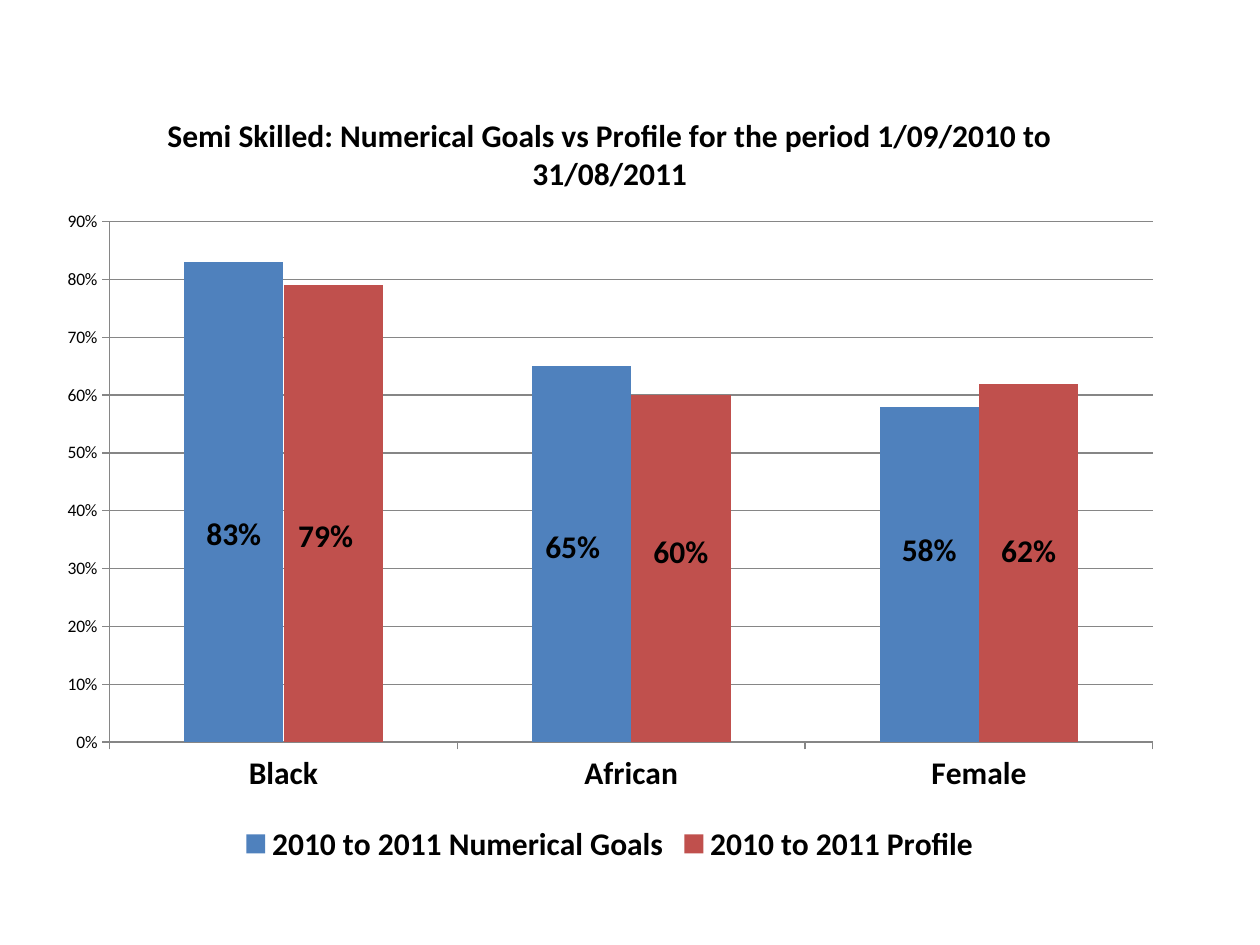
from lxml import etree
from pptx import Presentation
from pptx.chart.data import CategoryChartData
from pptx.dml.color import RGBColor
from pptx.enum.chart import XL_CHART_TYPE, XL_LABEL_POSITION, XL_LEGEND_POSITION, XL_TICK_MARK
from pptx.oxml.ns import qn
from pptx.util import Inches, Pt

COLUMN = XL_CHART_TYPE.COLUMN_CLUSTERED
CENTER = XL_LABEL_POSITION.CENTER
BOTTOM = XL_LEGEND_POSITION.BOTTOM
OUTSIDE = XL_TICK_MARK.OUTSIDE

COLORS = {"text": "000000", "grid": "868686", "goal": "4F81BD", "profile": "C0504D"}
FONT = "Calibri"
TITLE = "Semi Skilled: Numerical Goals vs Profile for the period 1/09/2010 to 31/08/2011"
GROUPS = ["Black", "African", "Female"]
SERIES = [
    ("2010 to 2011 Numerical Goals", "goal", [0.83, 0.65, 0.58],
     [(0, 0.26), (-0.07, -0.05), (0, -0.19)]),
    ("2010 to 2011 Profile", "profile", [0.79, 0.6, 0.62],
     [(-0.06, 0.18), (0, -0.13), (0, -0.09)]),
]
FRAME = (0.35, 0.68, 8.98, 6.22)
PLOT = (0.87, 1.76, 8.28, 4.13)


class Deck:
    def __init__(self, colors, font):
        self.colors = colors
        self.font = font
        self.prs = Presentation()
        self.prs.slide_width = Inches(10)
        self.prs.slide_height = Inches(7.5)
        self.slide = self.prs.slides.add_slide(self.prs.slide_layouts[6])

    def color(self, name):
        return RGBColor.from_string(self.colors[name])

    def style(self, font, size, bold):
        font.name = self.font
        font.size = Pt(size)
        font.bold = bold
        font.color.rgb = self.color("text")

    def layout(self, parent, index, values):
        for old in parent.findall(qn("c:layout")):
            parent.remove(old)
        node = etree.Element(qn("c:layout"))
        manual = etree.SubElement(node, qn("c:manualLayout"))
        for tag, value in values.items():
            etree.SubElement(manual, qn("c:" + tag)).set("val", str(value))
        parent.insert(index, node)

    def chart(self, frame, groups, series):
        data = CategoryChartData(number_format="0%")
        data.categories = groups
        for name, _, values, _ in series:
            data.add_series(name, values)
        box = [Inches(n) for n in frame]
        chart = self.slide.shapes.add_chart(COLUMN, *box, data).chart
        self.style(chart.font, 10, False)
        plot = chart.plots[0]
        plot.gap_width = 150
        plot.overlap = 0
        plot.vary_by_categories = False
        for item, (_, color, _, shifts) in zip(plot.series, series):
            item.format.fill.solid()
            item.format.fill.fore_color.rgb = self.color(color)
            self.labels(item, shifts, frame)
        return chart

    def labels(self, item, shifts, frame):
        labels = item.data_labels
        labels.show_value = True
        labels.number_format = "0%"
        labels.number_format_is_linked = False
        labels.position = CENTER
        self.style(labels.font, 18, True)
        for index, _ in enumerate(shifts):
            label = item.points[index].data_label
            self.style(label.font, 18, True)
            label.position = CENTER
        nodes = labels._element.findall(qn("c:dLbl"))
        for node, (x, y) in zip(nodes, shifts):
            self.layout(node, 1, {"x": x / frame[2], "y": y / frame[3]})

    def title(self, chart, text):
        chart.has_title = True
        run = chart.chart_title.text_frame.paragraphs[0].add_run()
        run.text = text
        self.style(run.font, 18, True)
        chart.chart_title.include_in_layout = False

    def axes(self, chart):
        value = chart.value_axis
        value.minimum_scale = 0
        value.maximum_scale = 0.9
        value.major_unit = 0.1
        value.tick_labels.number_format = "0%"
        value.tick_labels.number_format_is_linked = False
        lines = [value.major_gridlines.format.line]
        for axis, size, bold in ((value, 10, False), (chart.category_axis, 18, True)):
            axis.major_tick_mark = OUTSIDE
            self.style(axis.tick_labels.font, size, bold)
            lines.append(axis.format.line)
        for line in lines:
            line.color.rgb = self.color("grid")
            line.width = Pt(0.75)

    def legend(self, chart):
        chart.has_legend = True
        chart.legend.position = BOTTOM
        chart.legend.include_in_layout = False
        self.style(chart.legend.font, 18, True)

    def place(self, chart, frame, plot):
        left, top, width, height = frame
        area = chart._chartSpace.find(".//" + qn("c:plotArea"))
        self.layout(area, 0, {
            "layoutTarget": "inner", "xMode": "edge", "yMode": "edge",
            "x": (plot[0] - left) / width, "y": (plot[1] - top) / height,
            "w": plot[2] / width, "h": plot[3] / height,
        })


def main():
    deck = Deck(COLORS, FONT)
    chart = deck.chart(FRAME, GROUPS, SERIES)
    deck.title(chart, TITLE)
    deck.axes(chart)
    deck.legend(chart)
    deck.place(chart, FRAME, PLOT)
    deck.prs.save("out.pptx")


if __name__ == "__main__":
    main()
